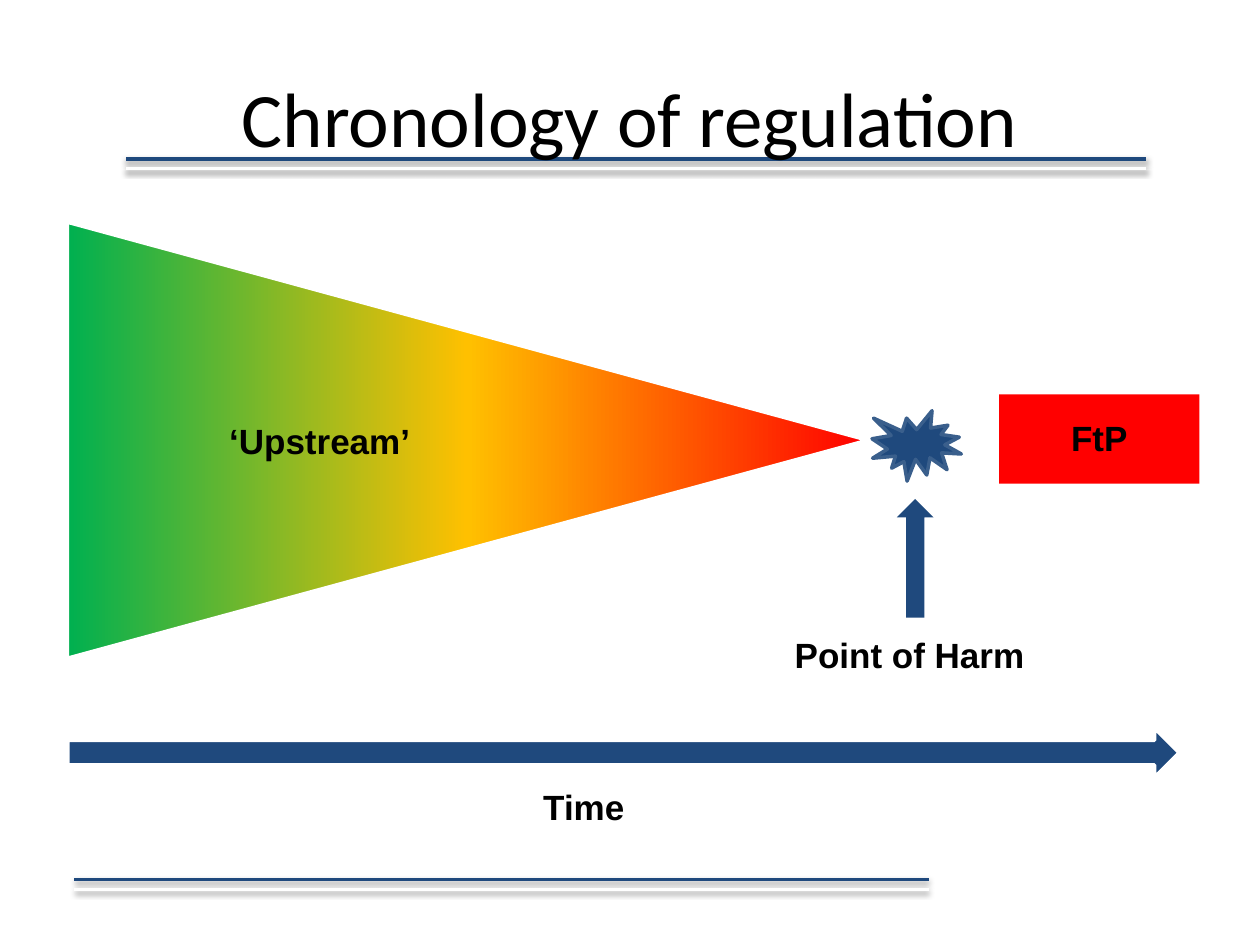
"""Build the 'Chronology of regulation' slide."""
import pptx
import pptx.dml.color
import pptx.enum.shapes
import pptx.enum.text
import pptx.oxml
import pptx.oxml.ns
import pptx.util

Cm, Pt = pptx.util.Cm, pptx.util.Pt
SHAPE = pptx.enum.shapes.MSO_SHAPE
ALIGN = pptx.enum.text.PP_ALIGN
ANCHOR = pptx.enum.text.MSO_ANCHOR
AUTO = pptx.enum.text.MSO_AUTO_SIZE
NS = pptx.oxml.ns.nsdecls("a")

NAVY, WHITE, BLACK, RED = "1F497D", "FFFFFF", "000000", "FF0000"
RISK = [(0, RED), (50, "FFC000"), (100, "00B050")]
RULES = [(2.54, 23.1, 3.2), (1.5, 18.72, 17.73)]
RULE_GAP = 0.2
TITLE = ("Chronology of regulation", (1.27, 0.76, 22.86, 3.18))
SHAPES = [
    (SHAPE.ISOSCELES_TRIANGLE, (5.03, 0.81, 8.79, 16.13), RISK, WHITE, 90),
    (SHAPE.UP_ARROW, (18.08, 10.06, 0.74, 2.39), NAVY, None, 0),
    (SHAPE.RECTANGLE, (20.14, 7.95, 4.04, 1.8), RED, None, 0),
    (SHAPE.RIGHT_ARROW, (1.37, 14.68, 22.4, 0.99), NAVY, WHITE, 0),
    (SHAPE.EXPLOSION1, (17.58, 8.28, 1.8, 1.42), NAVY, "3A5F8C", 0),
]
LABELS = [
    ("FtP", (20.14, 8.28, 4.04, 1.12), ALIGN.CENTER),
    ("Point of Harm", (15.77, 12.65, 5.41, 1.12), ALIGN.LEFT),
    ("‘Upstream’", (4.37, 8.33, 7.8, 1.12), ALIGN.LEFT),
    ("Time", (9.37, 15.72, 4.8, 1.12), ALIGN.CENTER),
]


def rgb(color):
    return pptx.dml.color.RGBColor.from_string(color)


def add_text(s, text, box, font="Arial", size=20, bold=True, color=BLACK,
             align=ALIGN.CENTER, anchor=ANCHOR.TOP, auto=AUTO.SHAPE_TO_FIT_TEXT):
    tf = s.shapes.add_textbox(*map(Cm, box)).text_frame
    tf.word_wrap, tf.auto_size, tf.vertical_anchor = True, auto, anchor
    p = tf.paragraphs[0]
    p.alignment = align
    r = p.add_run()
    r.text = text
    r.font.name, r.font.size, r.font.bold = font, Pt(size), bold
    r.font.color.rgb = rgb(color)


def add_rule(s, x1, x2, y, color):
    ln = s.shapes.add_connector(pptx.enum.shapes.MSO_CONNECTOR.STRAIGHT,
                                Cm(x1), Cm(y), Cm(x2), Cm(y))
    ln.line.color.rgb, ln.line.width = rgb(color), Pt(2)
    ln._element.spPr.append(pptx.oxml.parse_xml(
        f'<a:effectLst {NS}><a:outerShdw blurRad="{Pt(3.1)}" dist="{Pt(1.6)}" '
        f'dir="5400000" rotWithShape="0"><a:srgbClr val="{BLACK}">'
        '<a:alpha val="38000"/></a:srgbClr></a:outerShdw></a:effectLst>'))


def set_gradient(sp, stops):
    sp.fill.gradient()
    spPr = sp._element.spPr
    gs = "".join(f'<a:gs pos="{pos * 1000}"><a:srgbClr val="{color}"/></a:gs>'
                 for pos, color in stops)
    spPr.replace(spPr.find(pptx.oxml.ns.qn("a:gradFill")), pptx.oxml.parse_xml(
        f'<a:gradFill {NS} rotWithShape="1"><a:gsLst>{gs}</a:gsLst>'
        '<a:lin ang="5400000" scaled="0"/></a:gradFill>'))


def add_shape(s, kind, box, fill, line, rotation):
    sp = s.shapes.add_shape(kind, *map(Cm, box))
    sp.shadow.inherit = False
    sp.rotation = rotation
    if isinstance(fill, list):
        set_gradient(sp, fill)
    else:
        sp.fill.solid()
        sp.fill.fore_color.rgb = rgb(fill)
    if line:
        sp.line.color.rgb, sp.line.width = rgb(line), Pt(2)
    else:
        sp.line.fill.background()


def main():
    prs = pptx.Presentation()
    prs.slide_width, prs.slide_height = Cm(25.4), Cm(19.05)
    s = prs.slides.add_slide(prs.slide_layouts[6])
    for x1, x2, y in RULES:
        add_rule(s, x1, x2, y, NAVY)
        add_rule(s, x1, x2, y + RULE_GAP, WHITE)
    add_text(s, *TITLE, font="Calibri", size=44, bold=False,
             anchor=ANCHOR.MIDDLE, auto=AUTO.NONE)
    for shape in SHAPES:
        add_shape(s, *shape)
    for text, box, align in LABELS:
        add_text(s, text, box, align=align)
    prs.save("out.pptx")


if __name__ == "__main__":
    main()
